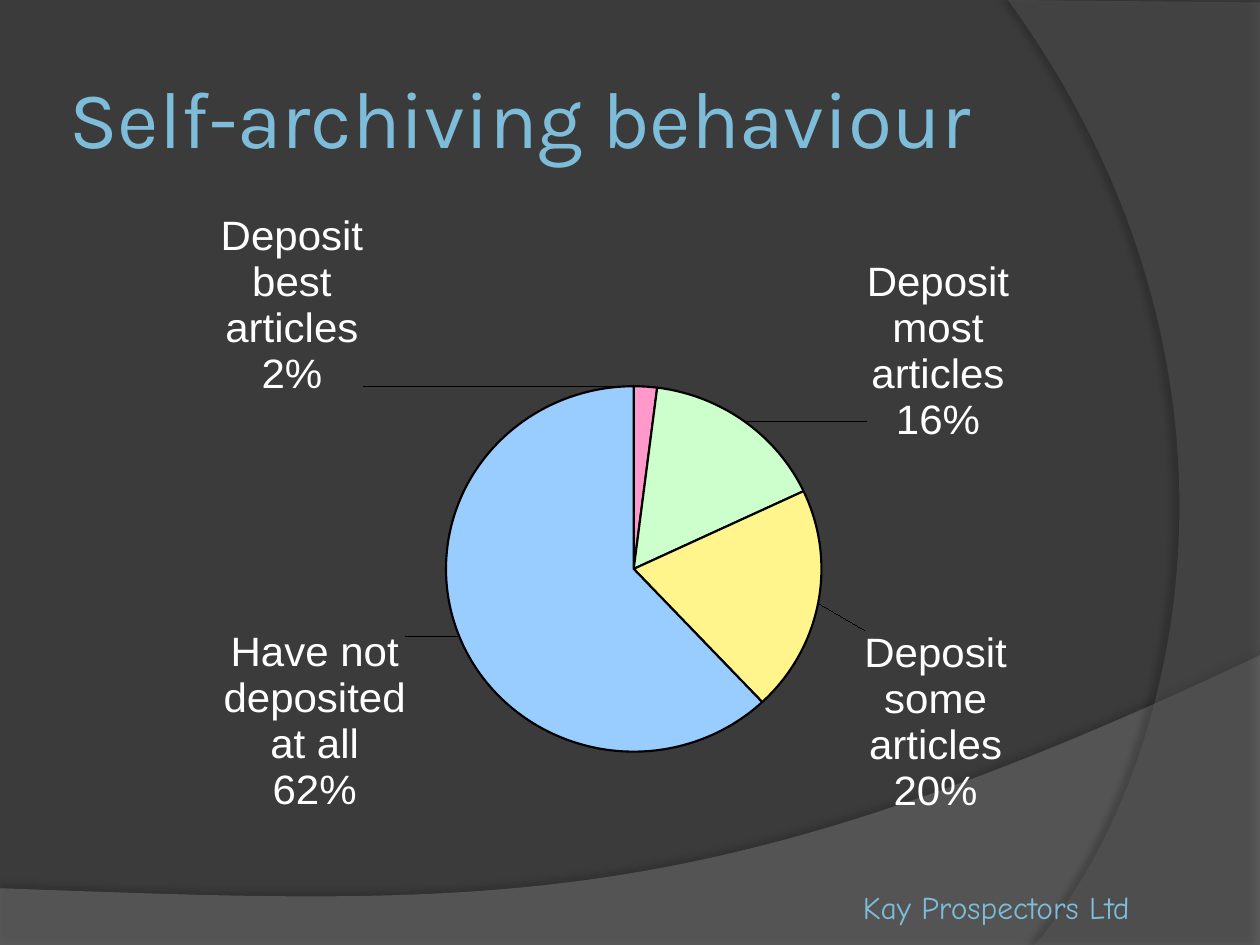
from pptx import Presentation
from pptx.chart.data import CategoryChartData
from pptx.dml.color import RGBColor
from pptx.enum.chart import XL_CHART_TYPE, XL_LABEL_POSITION
from pptx.enum.text import MSO_ANCHOR, PP_ALIGN
from pptx.oxml import parse_xml
from pptx.oxml.ns import nsdecls, qn
from pptx.util import Inches, Pt

PIE = XL_CHART_TYPE.PIE
OUTSIDE_END = XL_LABEL_POSITION.OUTSIDE_END
TOP, MIDDLE, LEFT = MSO_ANCHOR.TOP, MSO_ANCHOR.MIDDLE, PP_ALIGN.LEFT

THEME = {
    "bg": "3B3B3B", "accent": "7EBDD9", "label": "FFFFFF", "outline": "000000",
    "wave": "7F7F7F", "arc": "5E5E5E",
    "title_font": "Karla", "footer_font": "Comic Neue", "chart_font": "Arial",
    "title_size": 46, "footer_size": 18, "label_size": 24,
}
CHART_W, CHART_H = 8.11, 5.37


def write(tf, text, font, size, color, anchor=TOP):
    """Put one left-aligned, formatted line into a text frame."""
    tf.word_wrap = True
    tf.vertical_anchor = anchor
    p = tf.paragraphs[0]
    p.alignment = LEFT
    r = p.add_run()
    r.text = text
    r.font.name, r.font.size = font, Pt(size)
    r.font.color.rgb = RGBColor.from_string(color)


def layout_xml(x, y, extra="", size=""):
    """Manual chart layout; x and y in inches become fractions of the frame."""
    return parse_xml(
        f'<c:layout {nsdecls("c")}><c:manualLayout>{extra}<c:x val="{x / CHART_W}"/>'
        f'<c:y val="{y / CHART_H}"/>{size}</c:manualLayout></c:layout>')


prs = Presentation()
prs.slide_width, prs.slide_height = Inches(10), Inches(7.5)
s = prs.slides.add_slide(prs.slide_layouts[5])
s.background.fill.solid()
s.background.fill.fore_color.rgb = RGBColor.from_string(THEME["bg"])

# Background sweeps: corner points, then a Bezier curve from the last corner
# (control, control, end); fill opacity; shadow opacity, distance and angle
sweeps = [
    ([(0, 7.05), (0, 7.51), (10, 7.51), (10, 5.2)],
     [(5.59, 7.29), (3.91, 7.19), (0, 7.05)], THEME["wave"], 45, (35, 3.5, 270)),
    ([(10, 0.02), (10, 7.5), (8.21, 7.5)],
     [(9.35, 6.19), (10.18, 3), (8, 0)], THEME["arc"], 40, (45, 4, 180)),
]
for corners, curve, color, opacity, (shade, dist, angle) in sweeps:
    outline = [(Inches(x), Inches(y)) for x, y in corners + curve[-1:]]
    fb = s.shapes.build_freeform(*outline[0])
    fb.add_line_segments(outline[1:], close=True)
    sp = fb.convert_to_shape()
    sp.fill.solid()
    sp.fill.fore_color.rgb = RGBColor.from_string(color)
    sp.line.fill.background()
    sp.shadow.inherit = False
    spPr = sp._element.spPr

    # The last straight edge becomes the curve
    edge = list(spPr.iter(qn("a:lnTo")))[len(corners) - 1]
    pts = "".join(f'<a:pt x="{Inches(x) - sp.left}" y="{Inches(y) - sp.top}"/>'
                  for x, y in curve)
    edge.getparent().replace(edge, parse_xml(
        f'<a:cubicBezTo {nsdecls("a")}>{pts}</a:cubicBezTo>'))

    # Transparency and shadow
    spPr.find(f'{qn("a:solidFill")}/{qn("a:srgbClr")}').append(
        parse_xml(f'<a:alpha {nsdecls("a")} val="{opacity * 1000}"/>'))
    spPr.find(qn("a:effectLst")).append(parse_xml(
        f'<a:outerShdw {nsdecls("a")} blurRad="{Pt(4)}" dist="{Pt(dist)}" '
        f'dir="{angle * 60000}" rotWithShape="0"><a:srgbClr val="000000">'
        f'<a:alpha val="{shade * 1000}"/></a:srgbClr></a:outerShdw>'))

# Title, raised above the sweeps
title = s.shapes.title
title.left, title.top = Inches(0.5), Inches(0.3)
title.width, title.height = Inches(8.17), Inches(1.25)
tf = title.text_frame
tf.margin_left = tf.margin_right = tf.margin_top = tf.margin_bottom = Inches(0.05)
write(tf, "Self-archiving behaviour", THEME["title_font"], THEME["title_size"],
      THEME["accent"], MIDDLE)
s.shapes._spTree.append(title._element)

# Pie chart: category, value, slice colour, label shift from its outside-end place
slices = [
    ("Deposit best articles", 2, "FF99CC", (-2.81, 0.11)),
    ("Deposit most articles", 16, "CCFFCC", (0.94, 0.23)),
    ("Deposit some articles", 20, "FFF58C", (0.31, 0.21)),
    ("Have not deposited at all", 62, "99CCFF", (-0.37, -0.08)),
]
cd = CategoryChartData()
cd.categories = [row[0] for row in slices]
cd.add_series("Series 1", [row[1] for row in slices])
chart = s.shapes.add_chart(PIE, Inches(0.98), Inches(1.55), Inches(CHART_W),
                           Inches(CHART_H), cd).chart
chart.has_title = chart.has_legend = False
chart.font.name, chart.font.size = THEME["chart_font"], Pt(THEME["label_size"])
chart.font.color.rgb = RGBColor.from_string(THEME["label"])
plot = chart.plots[0]
plot.vary_by_categories = True

# Fixed inner plot area
area = chart._chartSpace.chart.plotArea
for old in area.findall(qn("c:layout")):
    area.remove(old)
area.insert(0, layout_xml(
    2.56, 1.2,
    '<c:layoutTarget val="inner"/><c:xMode val="edge"/><c:yMode val="edge"/>',
    f'<c:w val="{2.98 / CHART_W}"/><c:h val="{3.4 / CHART_H}"/>'))

# Slices and their labels
series = plot.series[0]
labels = series.data_labels
labels.show_value = False
labels.show_percentage = labels.show_category_name = True
labels.number_format, labels.number_format_is_linked = "0%", False
for i, (_, _, color, _) in enumerate(slices):
    point = series.points[i]
    point.format.fill.solid()
    point.format.fill.fore_color.rgb = RGBColor.from_string(color)
    point.format.line.color.rgb = RGBColor.from_string(THEME["outline"])
    point.format.line.width = Pt(1.23)
    label = point.data_label
    label.position = OUTSIDE_END
    label.font.name, label.font.size = THEME["chart_font"], Pt(THEME["label_size"])
    label.font.color.rgb = RGBColor.from_string(THEME["label"])

for dLbl, row in zip(series._element.iter(qn("c:dLbl")), slices):
    dLbl.insert(1, layout_xml(*row[3]))
    for tag, val in (("showVal", 0), ("showCatName", 1), ("showPercent", 1)):
        dLbl.find(qn(f"c:{tag}")).set("val", str(val))
    dLbl.append(parse_xml(f'<c:separator {nsdecls("c")}>\n</c:separator>'))

# Footer
box = s.shapes.add_textbox(Inches(6.75), Inches(7), Inches(3.08), Inches(0.4))
write(box.text_frame, "Kay Prospectors Ltd", THEME["footer_font"],
      THEME["footer_size"], THEME["accent"])

prs.save("out.pptx")
